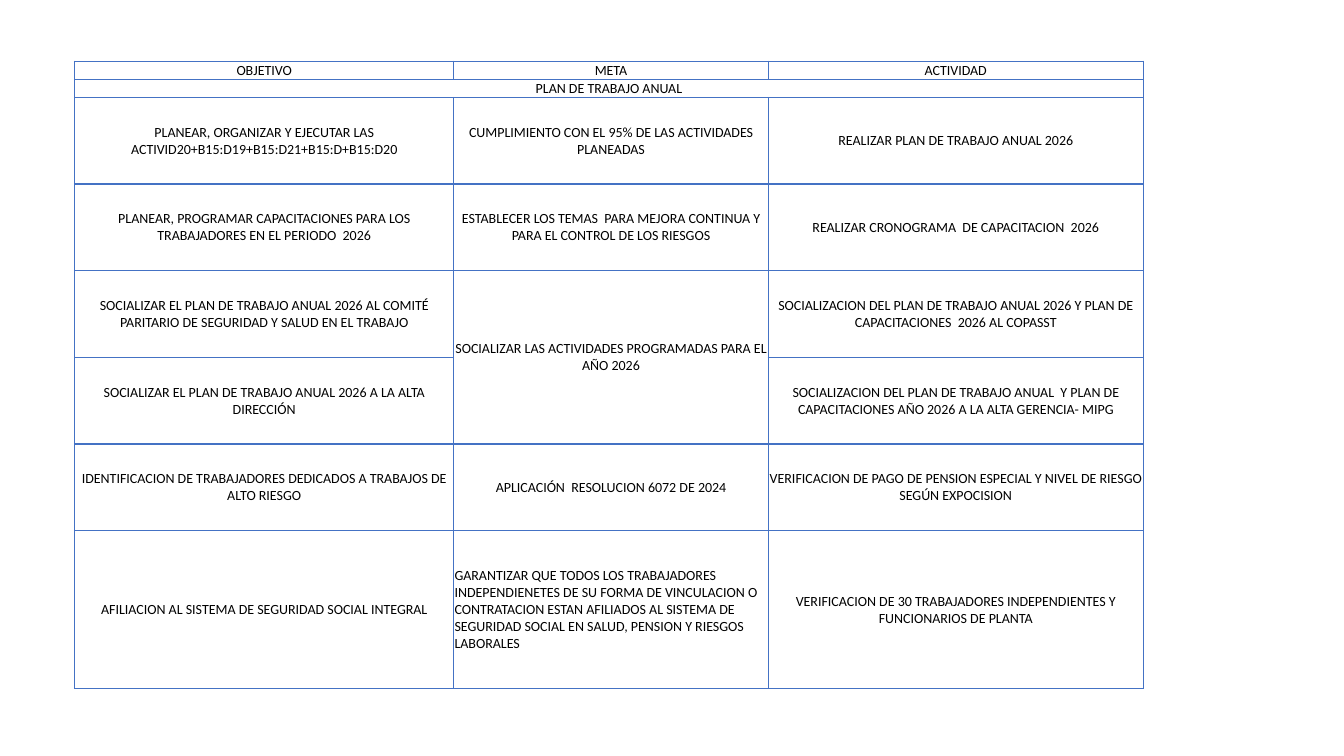
"""Build the annual work plan slide: objectives, goals and activities."""
from lxml import etree
from pptx import Presentation
from pptx.dml.color import RGBColor
from pptx.enum import text
from pptx.oxml import ns
from pptx.util import Pt


def color(value):
    return RGBColor.from_string(value)


def add_border(cell, side, position):
    properties = cell._tc.get_or_add_tcPr()
    line = etree.Element(ns.qn(f"a:{side}"), w=str(Pt(1)))
    fill = etree.SubElement(line, ns.qn("a:solidFill"))
    etree.SubElement(fill, ns.qn("a:srgbClr"), val="4472C4")
    properties.insert(position, line)


plan_rows = [
    ("OBJETIVO", "META", "ACTIVIDAD"),
    ("PLAN DE TRABAJO ANUAL", "", ""),
    ("PLANEAR, ORGANIZAR Y EJECUTAR LAS ACTIVID20+B15:D19+B15:D21+B15:D+B15:D20",
     "CUMPLIMIENTO CON EL 95% DE LAS ACTIVIDADES PLANEADAS",
     "REALIZAR PLAN DE TRABAJO ANUAL 2026"),
    ("PLANEAR, PROGRAMAR CAPACITACIONES PARA LOS TRABAJADORES EN EL PERIODO  2026",
     "ESTABLECER LOS TEMAS  PARA MEJORA CONTINUA Y PARA EL CONTROL DE LOS RIESGOS",
     "REALIZAR CRONOGRAMA  DE CAPACITACION  2026"),
    ("SOCIALIZAR EL PLAN DE TRABAJO ANUAL 2026 AL COMITÉ PARITARIO DE SEGURIDAD Y SALUD EN EL TRABAJO",
     "SOCIALIZAR LAS ACTIVIDADES PROGRAMADAS PARA EL AÑO 2026",
     "SOCIALIZACION DEL PLAN DE TRABAJO ANUAL 2026 Y PLAN DE CAPACITACIONES  2026 AL COPASST"),
    ("SOCIALIZAR EL PLAN DE TRABAJO ANUAL 2026 A LA ALTA DIRECCIÓN",
     "",
     "SOCIALIZACION DEL PLAN DE TRABAJO ANUAL  Y PLAN DE CAPACITACIONES AÑO 2026 A LA ALTA GERENCIA- MIPG"),
    ("IDENTIFICACION DE TRABAJADORES DEDICADOS A TRABAJOS DE ALTO RIESGO",
     "APLICACIÓN  RESOLUCION 6072 DE 2024",
     "VERIFICACION DE PAGO DE PENSION ESPECIAL Y NIVEL DE RIESGO SEGÚN EXPOCISION"),
    ("AFILIACION AL SISTEMA DE SEGURIDAD SOCIAL INTEGRAL",
     "GARANTIZAR QUE TODOS LOS TRABAJADORES INDEPENDIENETES DE SU FORMA DE VINCULACION O "
     "CONTRATACION ESTAN AFILIADOS AL SISTEMA DE SEGURIDAD SOCIAL EN SALUD, PENSION Y RIESGOS LABORALES",
     "VERIFICACION DE 30 TRABAJADORES INDEPENDIENTES Y FUNCIONARIOS DE PLANTA"),
]
column_widths = [271, 224.5, 268]
row_heights = [12.9] * 2 + [61.9] * 5 + [112.6]

prs = Presentation()
prs.slide_width, prs.slide_height = Pt(960), Pt(540)
slide = prs.slides.add_slide(prs.slide_layouts[6])
plan = slide.shapes.add_table(
    len(plan_rows), len(column_widths), Pt(53.2), Pt(43.8),
    Pt(sum(column_widths)), Pt(sum(row_heights))).table
plan.first_row = plan.horz_banding = False
for column, width in zip(plan.columns, column_widths):
    column.width = Pt(width)
for row, height in zip(plan.rows, row_heights):
    row.height = Pt(height)

plan.cell(1, 0).merge(plan.cell(1, 2))
plan.cell(4, 1).merge(plan.cell(5, 1))

for row, entries in zip(plan.rows, plan_rows):
    for cell, entry in zip(row.cells, entries):
        cell.text = entry
        cell.vertical_anchor = text.MSO_ANCHOR.MIDDLE
        cell.margin_left = cell.margin_right = cell.margin_top = Pt(0.5)
        cell.margin_bottom = 0
        cell.fill.background()
        for position, side in enumerate(("lnL", "lnR", "lnT", "lnB")):
            add_border(cell, side, position)
        paragraph = cell.text_frame.paragraphs[0]
        paragraph.alignment = text.PP_ALIGN.CENTER
        paragraph.font.name = "Calibri"
        paragraph.font.size = Pt(10)
        paragraph.font.bold = False
        paragraph.font.color.rgb = color("000000")

plan.cell(7, 1).text_frame.paragraphs[0].alignment = text.PP_ALIGN.LEFT

prs.save("out.pptx")
